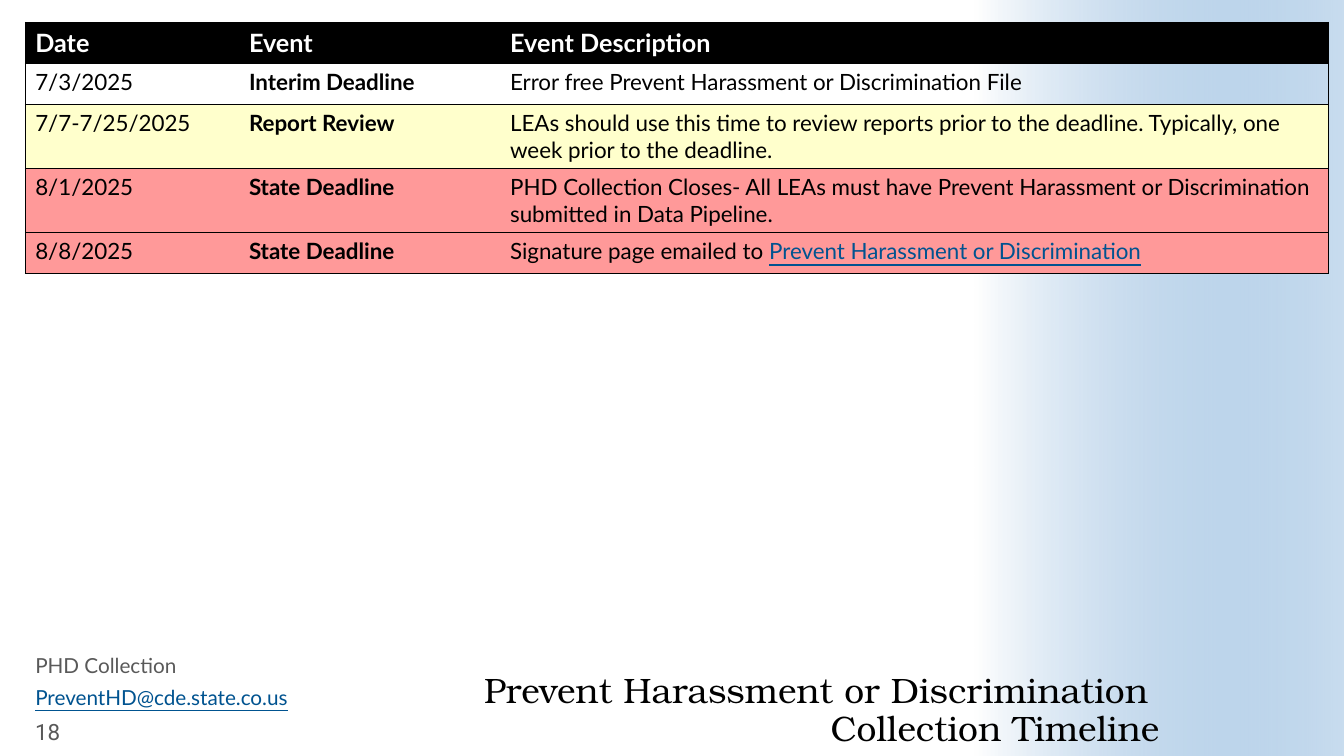
from dataclasses import dataclass, field

from lxml.etree import SubElement as Sub
from pptx import Presentation
from pptx.dml.color import RGBColor as Rgb
from pptx.enum.shapes import MSO_SHAPE as Kind
from pptx.enum.text import MSO_ANCHOR as Anchor, MSO_AUTO_SIZE as Fit, PP_ALIGN as Align
from pptx.oxml.ns import qn
from pptx.util import Inches, Pt


@dataclass(frozen=True)
class Theme:
    sans: str = "Lato"
    serif: str = "TeX Gyre Bonum"
    digit: str = "Roboto"
    black: str = "000000"
    white: str = "FFFFFF"
    gray: str = "595959"
    link: str = "005390"
    sky: str = "488BC9"
    cream: str = "FFFFCC"
    rose: str = "FF9999"
    title: float = 25.2
    head: float = 18
    text: float = 16
    foot: float = 14.8


@dataclass(frozen=True)
class Row:
    date: str
    event: str
    detail: str
    fill: str = ""
    link: str = ""


@dataclass(frozen=True)
class Note:
    text: str
    top: float
    look: dict = field(default_factory=dict)


T = Theme()
HEAD = Row("Date", "Event", "Event Description", T.black)
ROWS = [
    Row("7/3/2025", "Interim Deadline", "Error free Prevent Harassment or Discrimination File"),
    Row("7/7-7/25/2025", "Report Review",
        "LEAs should use this time to review reports prior to the deadline. "
        "Typically, one week prior to the deadline.", T.cream),
    Row("8/1/2025", "State Deadline",
        "PHD Collection Closes- All LEAs must have Prevent Harassment or Discrimination "
        "submitted in Data Pipeline.", T.rose),
    Row("8/8/2025", "State Deadline", "Signature page emailed to ", T.rose,
        "Prevent Harassment or Discrimination"),
]
NOTES = [
    Note("PHD Collection", 6.47, {"color": T.gray}),
    Note("PreventHD@cde.state.co.us", 6.79, {"color": T.link, "underline": True}),
]
WIDTHS = [2.12, 2.59, 8.22]
LEFT = 0.25
TALL = 0.41


def put(thing, **values) -> None:
    for name, value in values.items():
        setattr(thing, name, value)


def style(run, color: str, size: float, name: str = T.sans, **more) -> None:
    put(run.font, name=name, size=Pt(size), **more)
    run.font.color.rgb = Rgb.from_string(color)


def place(shape, left: float, top: float, width: float, height: float) -> None:
    put(shape, left=Inches(left), top=Inches(top), width=Inches(width), height=Inches(height))


def edge(cell, first: bool, last: bool) -> None:
    shown = {"lnL": first, "lnR": last, "lnT": True, "lnB": True}
    props = cell._tc.get_or_add_tcPr()
    for tag, on in shown.items():
        line = Sub(props, qn(f"a:{tag}"), w=str(Pt(0.5) if on else 0))
        if on:
            Sub(Sub(line, qn("a:solidFill")), qn("a:srgbClr"), val=T.black)
        else:
            Sub(line, qn("a:noFill"))


def shade(slide) -> None:
    band = slide.shapes.add_shape(Kind.RECTANGLE, Inches(9.67), 0, Inches(3.66), Inches(7.5))
    band.shadow.inherit = False
    band.line.fill.background()
    band.fill.gradient()
    band.fill.gradient_angle = 0
    for stop, color, spot in zip(band.fill.gradient_stops, (T.white, T.sky), (0, 1)):
        stop.color.rgb = Rgb.from_string(color)
        stop.position = spot
    tint = band.element.findall(".//" + qn("a:srgbClr"))[-1]
    Sub(tint, qn("a:alpha"), val="30000")
    band.element.getparent().insert(2, band.element)


def title(shape) -> None:
    place(shape, 4.26, 6.45, 7.24, 0.98)
    frame = shape.text_frame
    put(frame, text="Prevent Harassment or Discrimination \v Collection Timeline",
        vertical_anchor=Anchor.BOTTOM, auto_size=Fit.NONE, word_wrap=True,
        margin_left=0, margin_right=0, margin_top=0, margin_bottom=0)
    para = frame.paragraphs[0]
    put(para, alignment=Align.RIGHT, line_spacing=0.9)
    for run in para.runs:
        style(run, T.black, T.title, T.serif)


def table(slide) -> None:
    lines = [HEAD, *ROWS]
    grid = slide.shapes.add_table(len(lines), len(WIDTHS), Inches(LEFT), Inches(0.22),
                                  Inches(sum(WIDTHS)), Inches(TALL * len(lines))).table
    grid.horz_banding = False
    for col, width in zip(grid.columns, WIDTHS):
        col.width = Inches(width)
    for r, row in enumerate(lines):
        grid.rows[r].height = Inches(TALL)
        top = row is HEAD
        color, size = (T.white, T.head) if top else (T.black, T.text)
        for c, text in enumerate((row.date, row.event, row.detail)):
            cell = grid.cell(r, c)
            edge(cell, c == 0, c == len(WIDTHS) - 1)
            if row.fill:
                cell.fill.solid()
                cell.fill.fore_color.rgb = Rgb.from_string(row.fill)
            else:
                cell.fill.background()
            para = cell.text_frame.paragraphs[0]
            run = para.add_run()
            run.text = text
            style(run, color, size, bold=top or c == 1)
        if row.link:
            run = para.add_run()
            run.text = row.link
            style(run, T.link, size, bold=False, underline=True)


def foot(shape, note: Note) -> None:
    place(shape, LEFT, note.top, 3.89, 0.31)
    put(shape.text_frame, text=note.text, auto_size=Fit.NONE, word_wrap=True)
    para = shape.text_frame.paragraphs[0]
    put(para, line_spacing=0.8, space_before=Pt(0))
    props = para._p.get_or_add_pPr()
    props.set("marL", "0")
    props.set("indent", "0")
    Sub(props, qn("a:buNone"))
    style(para.runs[0], size=T.foot, **note.look)


def page(slide) -> None:
    box = slide.shapes.add_textbox(Inches(LEFT), Inches(7.1), Inches(0.85), Inches(0.31))
    put(box.text_frame, text="18", word_wrap=True, vertical_anchor=Anchor.MIDDLE)
    style(box.text_frame.paragraphs[0].runs[0], T.gray, T.text, T.digit)


def main() -> None:
    deck = Presentation()
    put(deck, slide_width=Inches(13.33), slide_height=Inches(7.5))
    slide = deck.slides.add_slide(deck.slide_layouts[3])
    shade(slide)
    title(slide.shapes.title)
    table(slide)
    for spot, note in enumerate(NOTES, 1):
        foot(slide.placeholders[spot], note)
    page(slide)
    deck.save("out.pptx")


if __name__ == "__main__":
    main()
